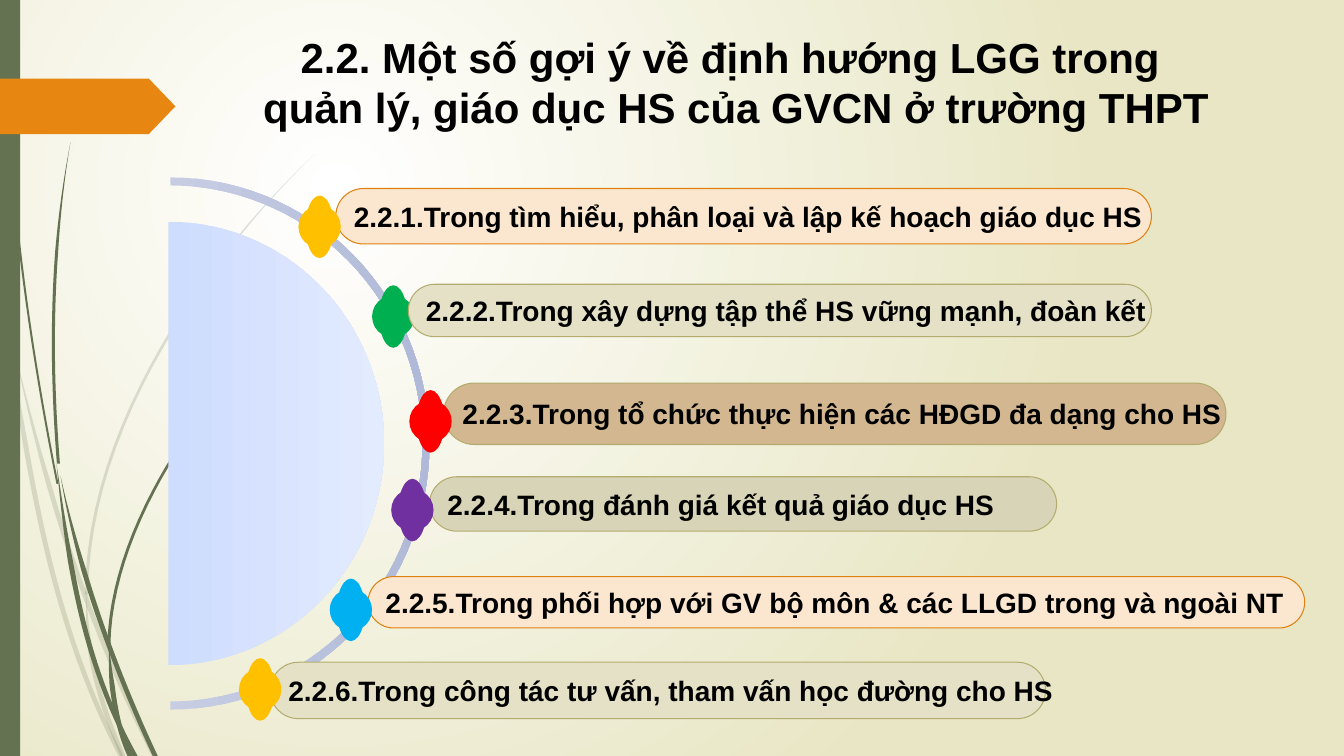
from collections import namedtuple
from math import cos, pi, sin

from lxml import etree
from pptx import Presentation
from pptx.dml.color import RGBColor
from pptx.enum.shapes import MSO_SHAPE
from pptx.enum.text import MSO_ANCHOR, MSO_AUTO_SIZE, PP_ALIGN
from pptx.oxml.ns import qn
from pptx.util import Inches, Pt

RECT, PENTAGON = MSO_SHAPE.RECTANGLE, MSO_SHAPE.PENTAGON
PILL, OVAL = MSO_SHAPE.ROUNDED_RECTANGLE, MSO_SHAPE.OVAL
LEFT, CENTER = PP_ALIGN.LEFT, PP_ALIGN.CENTER
MIDDLE, NO_AUTOFIT = MSO_ANCHOR.MIDDLE, MSO_AUTO_SIZE.NONE

BLACK = RGBColor(0x00, 0x00, 0x00)
WHITE = RGBColor(0xFF, 0xFF, 0xFF)
CREAM = RGBColor(0xE8, 0xE6, 0xC4)
MOSS = RGBColor(0x64, 0x72, 0x52)
ORANGE = RGBColor(0xE7, 0x87, 0x12)
RING_LEFT, RING_RIGHT = RGBColor(0xC6, 0xCD, 0xE3), RGBColor(0xB0, 0xBA, 0xD8)
DISC_LEFT, DISC_RIGHT = RGBColor(0xCE, 0xDC, 0xFE), RGBColor(0xE3, 0xEB, 0xFF)
PEACH, PEACH_EDGE = RGBColor(0xFB, 0xE7, 0xCF), RGBColor(0xDD, 0x81, 0x11)
SAND, SAND_EDGE = RGBColor(0xE4, 0xE1, 0xC7), RGBColor(0xB3, 0xAC, 0x6E)
TAN = RGBColor(0xD2, 0xB7, 0x90)
KHAKI = RGBColor(0xD8, 0xD4, 0xB7)
GOLD = RGBColor(0xFF, 0xC0, 0x00)
GREEN = RGBColor(0x00, 0xB0, 0x50)
RED = RGBColor(0xFF, 0x00, 0x00)
PURPLE = RGBColor(0x70, 0x30, 0xA0)
SKY = RGBColor(0x00, 0xB0, 0xF0)

# The slide is a grid of one-inch cells; every length below counts cells.
COLUMNS, ROWS = 13.33, 7.5
BLADE_STEPS, ARC_STEPS = 24, 60
FLOWER_CORE, PETAL_WIDTH, PETAL_HEIGHT = 0.42, 0.28, 0.62


def write(frame, text, size=20, align=LEFT, wrap=False):
    """Fill a text frame with bold black Arial, one paragraph per line."""
    frame.auto_size, frame.word_wrap, frame.vertical_anchor = NO_AUTOFIT, wrap, MIDDLE
    frame.text = text
    for paragraph in frame.paragraphs:
        paragraph.alignment = align
        font = paragraph.runs[0].font
        font.name, font.size, font.bold = "Arial", Pt(size), True
        font.color.rgb = BLACK


def paint(shape, fill, edge=None, opacity=100):
    """Apply a flat colour, or a left-to-right gradient if fill is a list."""
    shape.shadow.inherit = False
    if isinstance(fill, list):
        shape.fill.gradient()
        shape.fill.gradient_angle = 0
        for stop, color in zip(shape.fill.gradient_stops, fill):
            stop.color.rgb = color
    else:
        shape.fill.solid()
        shape.fill.fore_color.rgb = fill
    if opacity < 100:
        color = shape._element.spPr.find(".//" + qn("a:srgbClr"))
        etree.SubElement(color, qn("a:alpha"), val=str(opacity * 1000))
    if edge is None:
        shape.line.fill.background()
    else:
        shape.line.color.rgb = edge
        shape.line.width = Pt(0.75)


prs = Presentation()
prs.slide_width, prs.slide_height = Inches(COLUMNS), Inches(ROWS)
slide = prs.slides.add_slide(prs.slide_layouts[5])
shapes = slide.shapes

# Background: a round glow in the upper left quarter
backdrop = slide.background.fill
backdrop.gradient()
for stop, color in zip(backdrop.gradient_stops, (WHITE, CREAM)):
    stop.color.rgb = color
linear = slide._element.find(".//" + qn("a:lin"))
glow = etree.Element(qn("a:path"), path="circle")
etree.SubElement(glow, qn("a:fillToRect"), l="50000", t="50000", r="100000", b="100000")
linear.getparent().replace(linear, glow)

# Grass: each blade is a Bézier spine from tip to root, widening over its first third
Blade = namedtuple("Blade", "tip upper_pull lower_pull root width opacity")
blades = [
    Blade((0, 2.85), (0.26, 4.4), (0.42, 6), (1.2, ROWS), 0.05, 20),
    Blade((0.14, 3.45), (0.44, 4.8), (0.85, 6.15), (1.53, ROWS), 0.05, 20),
    Blade((3.12, 1.53), (2.1, 2.5), (0.86, 4.2), (0.86, 5.9), 0.03, 20),
    Blade((0.86, 5.9), (0.85, 6.5), (1, 7), (1.22, ROWS), 0.05, 20),
    Blade((0.04, 0), (0.05, 1.6), (0.25, 3.2), (0.57, 4.8), 0.02, 100),
    Blade((0.56, 4.6), (0.68, 5.55), (0.81, 6.55), (1.34, ROWS), 0.05, 100),
    Blade((0.6, 4.72), (0.78, 5.65), (1.12, 6.6), (1.54, ROWS), 0.05, 100),
    Blade((0.7, 1.41), (0.5, 2.5), (0.5, 3.6), (0.58, 4.6), 0.03, 100),
    Blade((2.6, 3.44), (1.9, 4.1), (1.1, 5.3), (1.08, 6.4), 0.03, 100),
    Blade((1.08, 6.4), (1.1, 6.8), (1.15, 7.2), (1.29, ROWS), 0.05, 100),
]
outlines = []
for blade in blades:
    left_side, right_side = [], []
    for step in range(BLADE_STEPS + 1):
        t = step / BLADE_STEPS
        weights = ((1 - t) ** 3, 3 * t * (1 - t) ** 2, 3 * t ** 2 * (1 - t), t ** 3)
        x, y = (sum(w * n for w, n in zip(weights, axis)) for axis in zip(*blade[:4]))
        half_width = blade.width / 2 * min(1, 3 * t)
        left_side.append((x - half_width, y))
        right_side.append((x + half_width, y))
    outlines.append((left_side + right_side[::-1], MOSS, blade.opacity))

# Half ring and half disc: arcs swept from top to bottom
arcs = []
for center_x, radius_x, radius_y in ((1.69, 2.57, 2.64), (1.69, 2.5, 2.56), (1.67, 2.14, 2.2)):
    angles = [pi * step / ARC_STEPS - pi / 2 for step in range(ARC_STEPS + 1)]
    arcs.append([(center_x + radius_x * cos(a), 4.4 + radius_y * sin(a)) for a in angles])
ring_outer, ring_inner, disc = arcs
outlines.append((ring_outer + ring_inner[::-1], [RING_LEFT, RING_RIGHT], 100))
outlines.append((disc, [DISC_LEFT, DISC_RIGHT], 100))

for points, fill, opacity in outlines:
    start, *rest = [(Inches(x), Inches(y)) for x, y in points]
    builder = shapes.build_freeform(*start)
    builder.add_line_segments(rest, close=True)
    paint(builder.convert_to_shape(), fill, opacity=opacity)

# Side strip and arrow tab
strip = shapes.add_shape(RECT, *map(Inches, (0, 0, 0.2, ROWS)))
paint(strip, MOSS)
tab = shapes.add_shape(PENTAGON, *map(Inches, (0, 0.78, 1.74, 0.55)))
tab.adjustments[0] = 0.48
paint(tab, ORANGE)

title = shapes.title
title.left, title.top, title.width, title.height = map(Inches, (1.92, 0.25, 10.77, 1.12))
write(title.text_frame,
      "2.2. Một số gợi ý về định hướng LGG trong \nquản lý, giáo dục HS của GVCN ở trường THPT",
      size=30, align=CENTER, wrap=True)

# Topics: a pill-shaped bar with a flower at its left end
Topic = namedtuple("Topic", "text bar bar_fill bar_edge flower flower_fill flower_behind",
                   defaults=(False,))
topics = [
    Topic("Trong tìm hiểu, phân loại và lập kế hoạch giáo dục HS",
          (3.33, 1.87, 8.09, 0.55), PEACH, PEACH_EDGE, (3.17, 2.25), GOLD),
    Topic("Trong xây dựng tập thể HS vững mạnh, đoàn kết",
          (4.05, 2.82, 7.37, 0.52), SAND, SAND_EDGE, (3.9, 3.14), GREEN, flower_behind=True),
    Topic("Trong tổ chức thực hiện các HĐGD đa dạng cho HS",
          (4.4, 3.8, 7.76, 0.61), TAN, SAND_EDGE, (4.27, 4.18), RED),
    Topic("Trong đánh giá kết quả giáo dục HS",
          (4.26, 4.73, 6.22, 0.54), KHAKI, SAND_EDGE, (4.09, 5.06), PURPLE),
    Topic("Trong phối hợp với GV bộ môn & các LLGD trong và ngoài NT",
          (3.65, 5.72, 9.29, 0.51), PEACH, PEACH_EDGE, (3.48, 6.05), SKY),
    Topic("Trong công tác tư vấn, tham vấn học đường cho HS",
          (2.68, 6.57, 7.69, 0.56), SAND, SAND_EDGE, (2.58, 6.84), GOLD),
]
for number, topic in enumerate(topics, start=1):
    parts = [(PILL, topic.bar, topic.bar_fill, topic.bar_edge)]
    x, y = topic.flower
    for width, height in ((FLOWER_CORE, FLOWER_CORE), (PETAL_WIDTH, PETAL_HEIGHT)):
        petal = (x - width / 2, y - height / 2, width, height)
        parts.append((OVAL, petal, topic.flower_fill, None))
    if topic.flower_behind:
        parts.reverse()
    for kind, box, fill, edge in parts:
        part = shapes.add_shape(kind, *map(Inches, box))
        paint(part, fill, edge)
        if kind == PILL:
            part.adjustments[0] = 0.5
            write(part.text_frame, f"2.2.{number}.{topic.text}")

prs.save("out.pptx")
